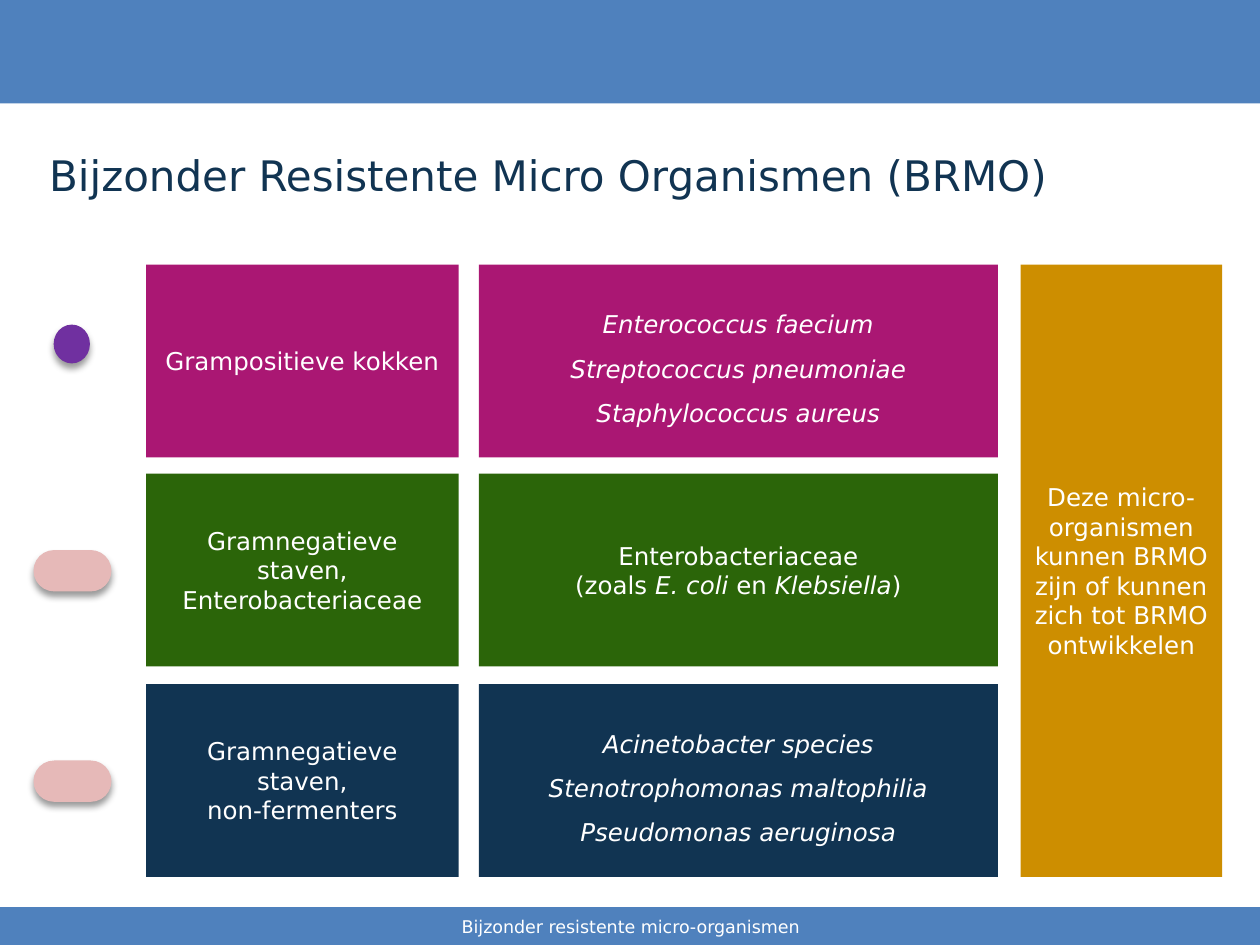
from lxml import etree
from pptx import Presentation
from pptx.dml.color import RGBColor
from pptx.enum import shapes, text
from pptx.oxml import ns
from pptx.util import Inches, Pt

FONT = "DejaVu Sans"
COLORS = {
    "bar": "4F81BD", "magenta": "AA1773", "green": "2B6509", "navy": "113452",
    "gold": "CD8E00", "purple": "7030A0", "pink": "E6B9B8", "white": "FFFFFF",
    "shadow": "000000",
}
ROW_TOPS = [2.1, 3.76, 5.43]
ROW_HEIGHT = 1.53

# Each row: colour, group paragraphs, species paragraphs, line spacing of the species.
# A paragraph is a list of (text, italic) spans.
ROWS = [
    ("magenta", [[("Grampositieve kokken", False)]],
     [[("Enterococcus faecium", True)], [("Streptococcus pneumoniae", True)],
      [("Staphylococcus aureus", True)]], 1.5),
    ("green", [[("Gramnegatieve staven, Enterobacteriaceae", False)]],
     [[("Enterobacteriaceae", False), ("\n", False), ("(zoals ", False), ("E. coli ", True),
       ("en ", False), ("Klebsiella", True), (")", False)]], None),
    ("navy", [[("Gramnegatieve staven,", False)], [("non-fermenters", False)]],
     [[("Acinetobacter species", True)], [("Stenotrophomonas maltophilia", True)],
      [("Pseudomonas aeruginosa", True)]], 1.5),
]


def rgb(name):
    return RGBColor.from_string(COLORS[name])


def write(shape, paragraphs, size=14, color="white", align=text.PP_ALIGN.CENTER, spacing=None):
    """Fill a shape with paragraphs of (text, italic) spans; a "\\n" span breaks the line."""
    frame = shape.text_frame
    frame.word_wrap = True
    frame.auto_size = text.MSO_AUTO_SIZE.NONE
    frame.vertical_anchor = text.MSO_ANCHOR.MIDDLE
    for index, spans in enumerate(paragraphs):
        para = frame.paragraphs[0] if index == 0 else frame.add_paragraph()
        para.alignment = align
        if spacing:
            para.line_spacing = spacing
        for words, italic in spans:
            if words == "\n":
                para.add_line_break()
                continue
            span = para.add_run()
            span.text = words
            span.font.name = FONT
            span.font.size = Pt(size)
            span.font.italic = italic
            span.font.color.rgb = rgb(color)


def add_block(page, left, top, width, height, color, kind=shapes.MSO_SHAPE.RECTANGLE):
    block = page.shapes.add_shape(kind, Inches(left), Inches(top), Inches(width), Inches(height))
    block.shadow.inherit = False
    block.fill.solid()
    block.fill.fore_color.rgb = rgb(color)
    block.line.fill.background()
    return block


def add_bacterium(page, left, top, width, height, color, kind):
    """Draw an outlined cell with a soft shadow below it."""
    cell = add_block(page, left, top, width, height, color, kind)
    cell.line.color.rgb = rgb(color)
    cell.line.width = Pt(2)
    effects = cell._element.spPr.find(ns.qn("a:effectLst"))
    shadow = etree.SubElement(effects, ns.qn("a:outerShdw"), blurRad=str(Pt(4)),
                              dist=str(Pt(3)), dir="5400000", rotWithShape="0")
    tint = etree.SubElement(shadow, ns.qn("a:srgbClr"), val=COLORS["shadow"])
    etree.SubElement(tint, ns.qn("a:alpha"), val="40000")
    return cell


def add_title(page, words):
    title = page.shapes.title
    title.left, title.top = Inches(0.29), Inches(0.99)
    title.width, title.height = Inches(9.51), Inches(0.8)
    write(title, [[(words, False)]], size=24, color="navy", align=text.PP_ALIGN.LEFT)


def add_footer(page, words):
    box = page.shapes.add_textbox(Inches(3.42), Inches(7.2), Inches(3.17), Inches(0.3))
    write(box, [[(words, False)]], size=10)


def main():
    deck = Presentation()
    deck.slide_width, deck.slide_height = Inches(10), Inches(7.5)
    page = deck.slides.add_slide(deck.slide_layouts[5])

    add_block(page, 0, 7.2, 10, 0.3, "bar")
    add_block(page, 0, 0, 10, 0.82, "bar")
    add_title(page, "Bijzonder Resistente Micro Organismen (BRMO)")
    add_footer(page, "Bijzonder resistente micro-organismen")

    for top, (color, group, species, spacing) in zip(ROW_TOPS, ROWS):
        write(add_block(page, 1.16, top, 2.48, ROW_HEIGHT, color), group)
        write(add_block(page, 3.8, top, 4.12, ROW_HEIGHT, color), species, spacing=spacing)

    remark = add_block(page, 8.1, ROW_TOPS[0], 1.6, ROW_TOPS[-1] + ROW_HEIGHT - ROW_TOPS[0], "gold")
    write(remark, [[("Deze micro-organismen kunnen BRMO zijn of kunnen "
                     "zich tot BRMO ontwikkelen", False)]])

    add_bacterium(page, 0.44, 2.59, 0.26, 0.28, "purple", shapes.MSO_SHAPE.OVAL)
    for top in ROW_TOPS[1:]:
        rod = add_bacterium(page, 0.28, top + 0.62, 0.59, 0.3, "pink",
                            shapes.MSO_SHAPE.ROUNDED_RECTANGLE)
        rod.adjustments[0] = 0.5

    deck.save("out.pptx")


if __name__ == "__main__":
    main()
